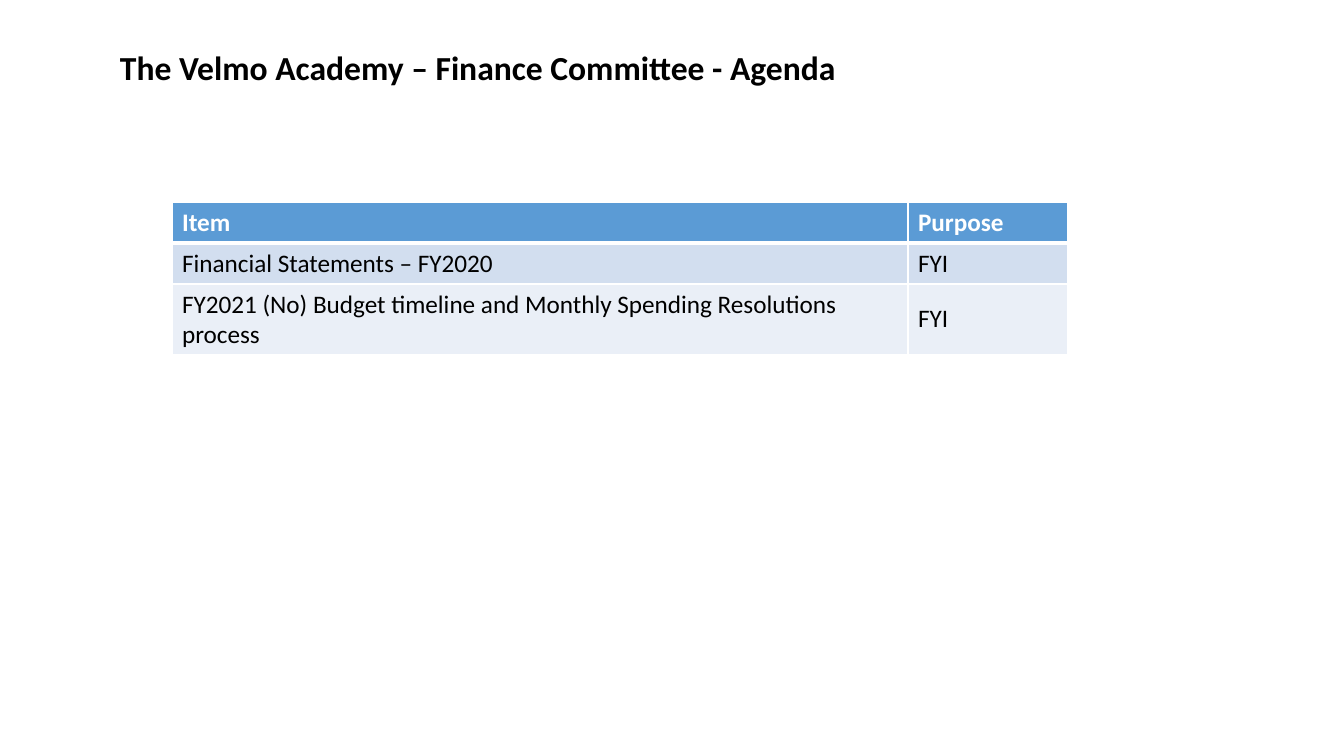
from dataclasses import dataclass

import lxml.etree
import pptx
import pptx.dml.color
import pptx.enum.text
import pptx.oxml.ns
import pptx.util

PX_PER_INCH = 100.8


@dataclass(frozen=True)
class Theme:
    font: str = "Calibri"
    title_size: int = 24
    table_size: int = 18
    ink: str = "000000"
    paper: str = "FFFFFF"
    header: str = "5B9BD5"
    bands: tuple = ("D2DEEF", "EAEFF7")
    rule: int = 1
    header_rule: int = 3


THEME = Theme()

TITLE = "The Velmo Academy – Finance Committee - Agenda"
AGENDA = [
    ("Item", "Purpose"),
    ("Financial Statements – FY2020", "FYI"),
    ("FY2021 (No) Budget timeline and Monthly Spending Resolutions process", "FYI"),
]


def px(n):
    return pptx.util.Emu(round(n * 914400 / PX_PER_INCH))


def rgb(color):
    return pptx.dml.color.RGBColor.from_string(color)


def style_text(tf, size, color, bold):
    for p in tf.paragraphs:
        for r in p.runs:
            r.font.name = THEME.font
            r.font.size = pptx.util.Pt(size)
            r.font.bold = bold
            r.font.color.rgb = rgb(color)


def add_border(cell, side, width):
    """Draw one side (L, R, T or B) of a cell; call before filling the cell."""
    qn = pptx.oxml.ns.qn
    tc_pr = cell._tc.get_or_add_tcPr()
    ln = lxml.etree.SubElement(tc_pr, qn(f"a:ln{side}"), w=str(pptx.util.Pt(width)))
    fill = lxml.etree.SubElement(ln, qn("a:solidFill"))
    lxml.etree.SubElement(fill, qn("a:srgbClr"), val=THEME.paper)


def add_title(slide, x, y, w, h):
    tf = slide.shapes.add_textbox(px(x), px(y), px(w), px(h)).text_frame
    tf.text = TITLE
    tf.word_wrap = False
    tf.auto_size = pptx.enum.text.MSO_AUTO_SIZE.SHAPE_TO_FIT_TEXT
    style_text(tf, THEME.title_size, THEME.ink, True)


def style_cell(cell, row):
    is_header = row == 0
    rules = {
        "L": THEME.rule,
        "R": THEME.rule,
        "T": THEME.header_rule if row == 1 else THEME.rule,
        "B": THEME.header_rule if is_header else THEME.rule,
    }
    for side, width in rules.items():
        add_border(cell, side, width)
    cell.fill.solid()
    band = THEME.bands[(row - 1) % len(THEME.bands)]
    cell.fill.fore_color.rgb = rgb(THEME.header if is_header else band)
    cell.vertical_anchor = pptx.enum.text.MSO_ANCHOR.MIDDLE
    color = THEME.paper if is_header else THEME.ink
    style_text(cell.text_frame, THEME.table_size, color, is_header)


def add_agenda_table(slide, x, y, w, h):
    """Fill the box: single-line rows first, the last row takes the rest."""
    purpose_w, row_h = 160, 41
    last = len(AGENDA) - 1
    table = slide.shapes.add_table(
        len(AGENDA), len(AGENDA[0]), px(x), px(y), px(w), px(h)
    ).table
    table.columns[0].width = px(w - purpose_w)
    table.columns[1].width = px(purpose_w)
    for row, texts in enumerate(AGENDA):
        table.rows[row].height = px(row_h if row < last else h - last * row_h)
        for col, text in enumerate(texts):
            cell = table.cell(row, col)
            cell.text_frame.text = text
            style_cell(cell, row)


def main():
    prs = pptx.Presentation()
    prs.slide_width, prs.slide_height = px(1344), px(756)
    slide = prs.slides.add_slide(prs.slide_layouts[6])
    add_title(slide, 110, 42, 738, 50)
    add_agenda_table(slide, 172, 202, 896, 152)
    prs.save("out.pptx")


if __name__ == "__main__":
    main()
